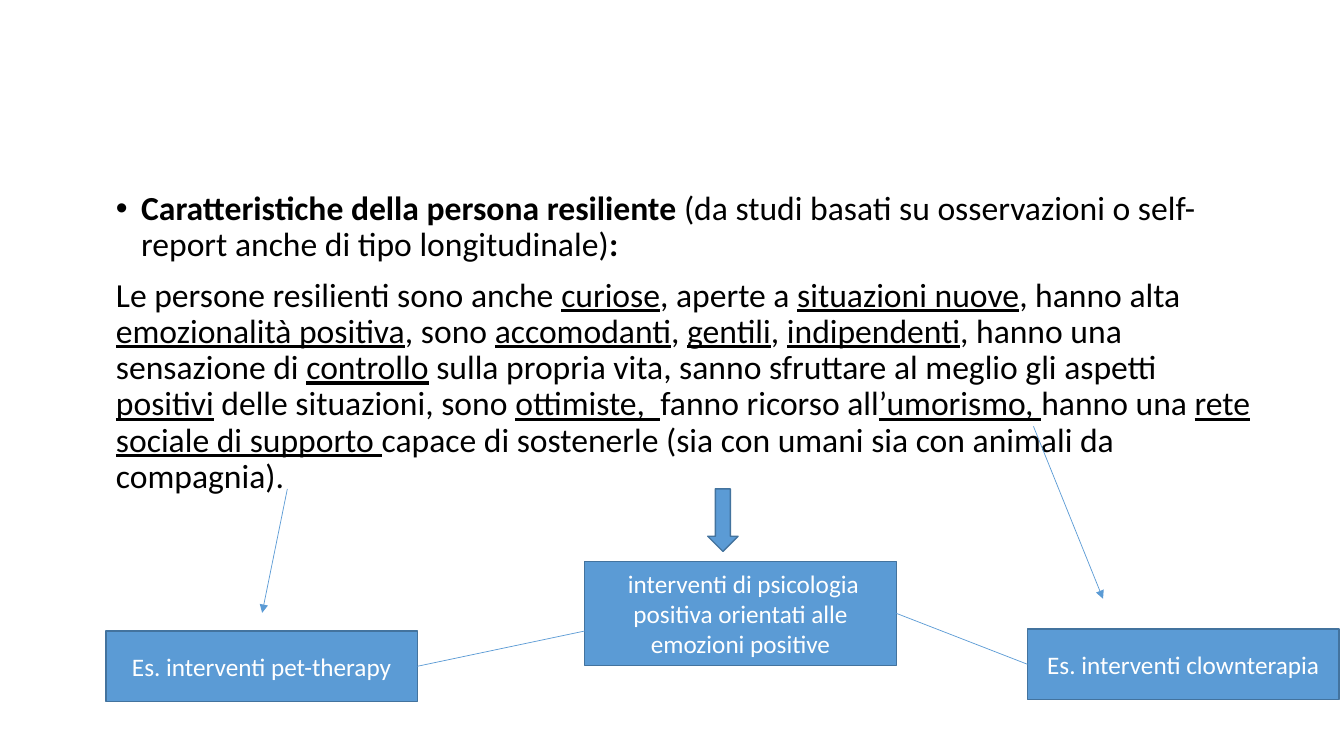
from lxml import etree
from pptx import Presentation
from pptx.dml.color import RGBColor
from pptx.enum.shapes import MSO_CONNECTOR, MSO_SHAPE
from pptx.enum.text import MSO_ANCHOR, MSO_AUTO_SIZE, PP_ALIGN
from pptx.oxml.ns import qn
from pptx.util import Inches, Pt

STRAIGHT = MSO_CONNECTOR.STRAIGHT
RECTANGLE, DOWN_ARROW = MSO_SHAPE.RECTANGLE, MSO_SHAPE.DOWN_ARROW
TOP, MIDDLE = MSO_ANCHOR.TOP, MSO_ANCHOR.MIDDLE
LEFT, CENTER = PP_ALIGN.LEFT, PP_ALIGN.CENTER
NO_FIT = MSO_AUTO_SIZE.NONE
LEFT_SITE, RIGHT_SITE = 1, 3

WIDTH, HEIGHT = 13.33, 7.5
FONT = "Calibri"
BLUE, EDGE, BLACK, WHITE = "5B9BD5", "43739E", "000000", "FFFFFF"
BOX_WIDTH, BOX_HEIGHT = 3.09, 0.7
BODY_LEFT = 1.05
ARROW_TOP = 4.85

# Every second piece between the marks is emphasised.
HEADING = ("|Caratteristiche della persona resiliente |(da studi basati su "
           "osservazioni o self-report anche di tipo longitudinale)|:")
TRAITS = (
    "Le persone resilienti sono anche |curiose|, aperte a |situazioni nuove|, "
    "hanno alta |emozionalità positiva|, sono |accomodanti|, |gentili|, "
    "|indipendenti|, hanno una sensazione di |controllo| sulla propria vita, "
    "sanno sfruttare al meglio gli aspetti |positivi| delle situazioni, sono "
    "|ottimiste,  |fanno ricorso all|’umorismo, |hanno una "
    "|rete sociale di supporto |capace di sostenerle (sia con umani sia con "
    "animali da compagnia).")


def color(hex_code):
    return RGBColor.from_string(hex_code)


def add_span(para, text, size, hex_code):
    span = para.add_run()
    span.text = text
    span.font.name, span.font.size = FONT, Pt(size)
    span.font.color.rgb = color(hex_code)
    span.font.bold = span.font.underline = False
    return span


def add_marked_text(para, text, emphasis):
    para.alignment = LEFT
    para.line_spacing, para.space_before = 0.9, Pt(10)
    for index, piece in enumerate(text.split("|")):
        if piece:
            span = add_span(para, piece, 24, BLACK)
            setattr(span.font, emphasis, index % 2 == 1)


def set_bullet(para, char=None, indent=0):
    props = para._p.get_or_add_pPr()
    props.set("marL", str(Inches(indent)))
    props.set("indent", str(-Inches(indent)))
    if char:
        etree.SubElement(props, qn("a:buFont")).set("typeface", "Arial")
        etree.SubElement(props, qn("a:buChar")).set("char", char)
    else:
        etree.SubElement(props, qn("a:buNone"))


def fill_body(body, left, top, width, height):
    body.left, body.top = Inches(left), Inches(top)
    body.width, body.height = Inches(width), Inches(height)
    frame = body.text_frame
    frame.word_wrap, frame.auto_size = True, NO_FIT
    frame.vertical_anchor = TOP
    heading = frame.paragraphs[0]
    add_marked_text(heading, HEADING, "bold")
    set_bullet(heading, "•", 0.25)
    traits = frame.add_paragraph()
    add_marked_text(traits, TRAITS, "underline")
    set_bullet(traits)


def add_block(slide, kind, left, top, width, height, label=None):
    block = slide.shapes.add_shape(
        kind, Inches(left), Inches(top), Inches(width), Inches(height))
    block.shadow.inherit = False
    block.fill.solid()
    block.fill.fore_color.rgb = color(BLUE)
    block.line.color.rgb = color(EDGE)
    block.line.width = Pt(1)
    if label:
        frame = block.text_frame
        frame.word_wrap, frame.vertical_anchor = True, MIDDLE
        para = frame.paragraphs[0]
        para.alignment = CENTER
        add_span(para, label, 18, WHITE)
    return block


def add_line(slide, start, end, arrow=False):
    line = slide.shapes.add_connector(
        STRAIGHT, *(Inches(value) for value in (*start, *end)))
    line.line.color.rgb = color(BLUE)
    line.line.width = Pt(0.5)
    if arrow:
        outline = line.line._get_or_add_ln()
        etree.SubElement(outline, qn("a:tailEnd")).set("type", "triangle")
    etree.SubElement(line._element.spPr, qn("a:effectLst"))
    return line


def add_interventions(slide, left, top):
    """Three linked boxes; left and top belong to the middle one."""
    height = 1.03
    right = left + BOX_WIDTH
    clown = add_block(slide, RECTANGLE, right + 1.3, top + 0.67,
                      BOX_WIDTH, BOX_HEIGHT, "Es. interventi clownterapia")
    pet = add_block(slide, RECTANGLE, BODY_LEFT, top + 0.69,
                    BOX_WIDTH, BOX_HEIGHT, "Es. interventi pet-therapy")
    middle = add_block(slide, RECTANGLE, left, top, BOX_WIDTH, height,
                       " interventi di psicologia positiva orientati alle "
                       "emozioni positive")
    link = add_line(slide, (left, top + 0.69),
                    (BODY_LEFT + BOX_WIDTH, top + 1.04))
    link.end_connect(pet, RIGHT_SITE)
    link = add_line(slide, (right, top + height / 2),
                    (right + 1.3, top + 1.02))
    link.begin_connect(middle, RIGHT_SITE)
    link.end_connect(clown, LEFT_SITE)


def add_arrows(slide):
    add_line(slide, (10.25, 4.23), (10.94, 5.94), arrow=True)
    add_line(slide, (2.85, ARROW_TOP), (2.6, 6.08), arrow=True)
    add_block(slide, DOWN_ARROW, 7.02, ARROW_TOP, 0.3, 0.62)


def main():
    deck = Presentation()
    deck.slide_width, deck.slide_height = Inches(WIDTH), Inches(HEIGHT)
    slide = deck.slides.add_slide(deck.slide_layouts[1])
    title, body = slide.placeholders
    title._element.getparent().remove(title._element)
    fill_body(body, BODY_LEFT, 1.85, 11.5, 4.76)
    add_arrows(slide)
    add_interventions(slide, 5.8, 5.57)
    deck.save("out.pptx")


if __name__ == "__main__":
    main()
